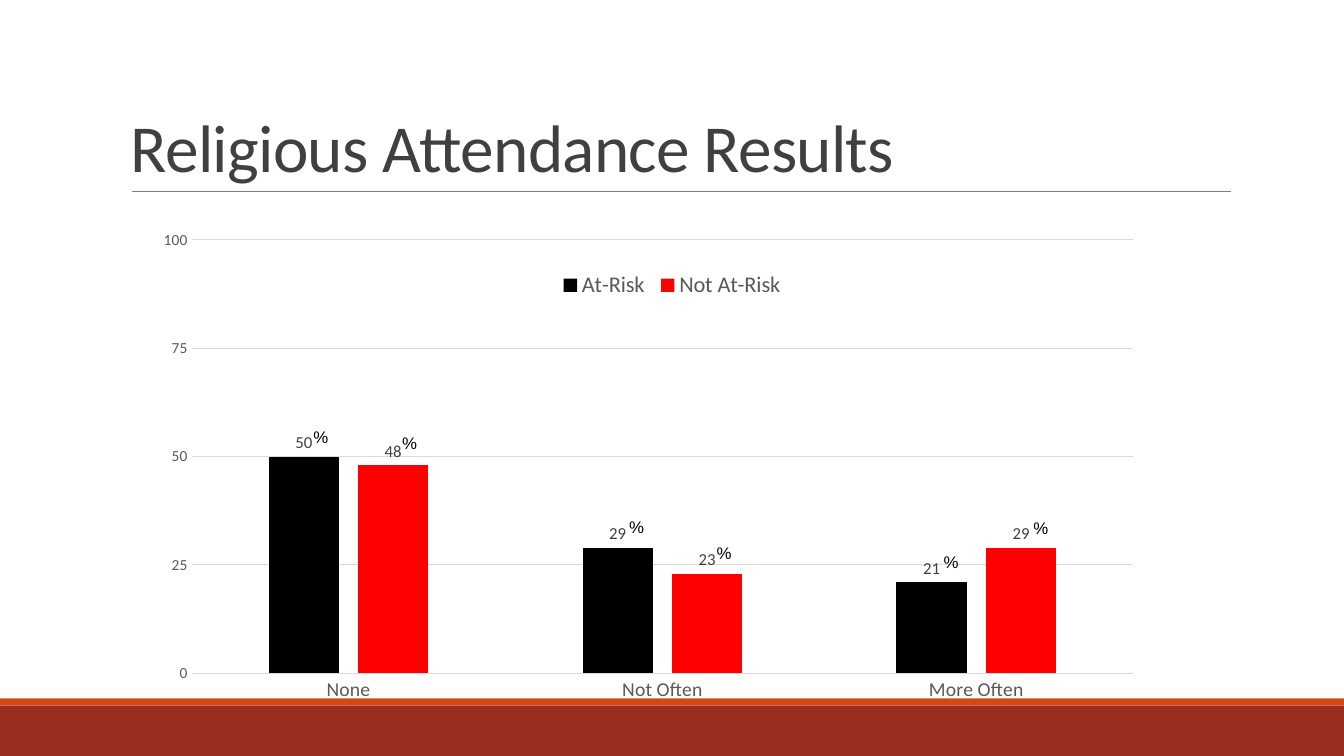
from lxml import etree
from pptx import Presentation
from pptx import util as u
from pptx.chart import data as chart_data
from pptx.dml import color
from pptx.enum import chart as chart_enum, shapes, text
from pptx.oxml import ns

TITLE = "Religious Attendance Results"
CATEGORIES = ["None", "Not Often", "More Often"]
SERIES = [
    ("At-Risk", [50, 29, 21], "000000"),
    ("Not At-Risk", [48, 23, 29], "FF0000"),
]
PERCENT_SIGNS = [
    (3.01, 4.18), (3.89, 4.24),
    (6.14, 5.08), (7.01, 5.34),
    (9.26, 5.42), (10.15, 5.09),
]
BANDS = [(7, 0.5, "9B2D1F"), (6.93, 0.07, "D34817")]
CHART_BOX = (1.43, 2.18, 10.01, 5.32)
PLOT_BOX = (1.9, 2.38, 9.34, 4.3)
LEGEND_BOX = (5.5, 2.67, 2.33, 0.32)

THEME = {
    "font": "Calibri", "sign_font": "Arial",
    "title": "404040", "label": "404040", "axis": "595959",
    "grid": "D9D9D9", "rule": "808080", "sign": "000000",
    "title_size": 48, "legend_size": 16, "category_size": 14,
    "label_size": 12, "value_size": 11, "sign_size": 12,
}


def inches(box):
    return [u.Inches(length) for length in box]


def apply(target, values):
    for name, value in values.items():
        setattr(target, name, value)


def style_font(font, role, tint, face="font"):
    apply(font, {"name": THEME[face], "size": u.Pt(THEME[role + "_size"])})
    font.color.rgb = color.RGBColor.from_string(THEME[tint])


def style_line(line, tint, width):
    line.color.rgb = color.RGBColor.from_string(tint)
    line.width = u.Pt(width)


def add_text(slide, box, words, role, face, frame_values):
    frame = slide.shapes.add_textbox(*inches(box)).text_frame
    apply(frame, {"word_wrap": True, **frame_values})
    paragraph = frame.paragraphs[0]
    run = paragraph.add_run()
    run.text = words
    style_font(run.font, role, role, face)
    return paragraph, run


def set_layout(element, box, successors, inner=False):
    for old in element.findall(ns.qn("c:layout")):
        element.remove(old)
    layout = etree.Element(ns.qn("c:layout"))
    manual = etree.SubElement(layout, ns.qn("c:manualLayout"))
    left, top, width, height = CHART_BOX
    fractions = [
        (box[0] - left) / width, (box[1] - top) / height,
        box[2] / width, box[3] / height,
    ]
    settings = [("layoutTarget", "inner")] if inner else []
    settings += [("xMode", "edge"), ("yMode", "edge")]
    settings += [(key, f"{part:.4f}") for key, part in zip("xywh", fractions)]
    for tag, value in settings:
        etree.SubElement(manual, ns.qn("c:" + tag)).set("val", value)
    following = next(child for child in element
                     if child.tag in [ns.qn("c:" + tag) for tag in successors])
    following.addprevious(layout)


def add_results_chart(slide):
    content = chart_data.CategoryChartData()
    content.categories = CATEGORIES
    for name, values, _ in SERIES:
        content.add_series(name, values)
    chart = slide.shapes.add_chart(
        chart_enum.XL_CHART_TYPE.COLUMN_CLUSTERED, *inches(CHART_BOX), content).chart
    apply(chart, {"has_title": False, "has_legend": True})
    chart.font.name = THEME["font"]

    plot = chart.plots[0]
    apply(plot, {"gap_width": 219, "overlap": -27, "vary_by_categories": False})
    for series, (_, _, tint) in zip(plot.series, SERIES):
        series.format.fill.solid()
        series.format.fill.fore_color.rgb = color.RGBColor.from_string(tint)
        labels = series.data_labels
        apply(labels, {"show_value": True,
                       "position": chart_enum.XL_LABEL_POSITION.OUTSIDE_END})
        style_font(labels.font, "label", "label")

    no_ticks = {"major_tick_mark": chart_enum.XL_TICK_MARK.NONE,
                "minor_tick_mark": chart_enum.XL_TICK_MARK.NONE}
    apply(chart.category_axis, no_ticks)
    style_font(chart.category_axis.tick_labels.font, "category", "axis")
    style_line(chart.category_axis.format.line, THEME["grid"], 0.75)

    value_axis = chart.value_axis
    apply(value_axis, {**no_ticks, "minimum_scale": 0, "maximum_scale": 100,
                       "major_unit": 25, "has_major_gridlines": True})
    style_font(value_axis.tick_labels.font, "value", "axis")
    value_axis.format.line.fill.background()
    style_line(value_axis.major_gridlines.format.line, THEME["grid"], 0.75)

    legend = chart.legend
    apply(legend, {"position": chart_enum.XL_LEGEND_POSITION.BOTTOM,
                   "include_in_layout": False})
    style_font(legend.font, "legend", "axis")
    set_layout(legend._element, LEGEND_BOX, ["overlay", "spPr", "txPr"])
    plot_area = value_axis._element.getparent()
    set_layout(plot_area, PLOT_BOX, ["barChart"], inner=True)


def main():
    presentation = Presentation()
    apply(presentation, {"slide_width": u.Inches(13.33), "slide_height": u.Inches(7.5)})
    slide = presentation.slides.add_slide(presentation.slide_layouts[6])

    for top, height, tint in BANDS:
        band = slide.shapes.add_shape(
            shapes.MSO_SHAPE.RECTANGLE, *inches((0, top, 13.33, height)))
        band.shadow.inherit = False
        band.fill.solid()
        band.fill.fore_color.rgb = color.RGBColor.from_string(tint)
        band.line.fill.background()

    rule = slide.shapes.add_connector(
        shapes.MSO_CONNECTOR.STRAIGHT, *inches((1.31, 1.9, 12.21, 1.9)))
    style_line(rule.line, THEME["rule"], 0.5)
    etree.SubElement(rule._element.spPr, ns.qn("a:effectLst"))

    paragraph, run = add_text(
        slide, (1.2, 0.31, 11, 1.59), TITLE, "title", "font",
        {"vertical_anchor": text.MSO_ANCHOR.BOTTOM})
    paragraph.line_spacing = 0.85
    run.font._element.set("spc", "-50")

    add_results_chart(slide)
    for left, top in PERCENT_SIGNS:
        add_text(slide, (left, top, 0.81, 0.3), "%", "sign", "sign_font",
                 {"auto_size": text.MSO_AUTO_SIZE.SHAPE_TO_FIT_TEXT})
    presentation.save("out.pptx")


if __name__ == "__main__":
    main()
